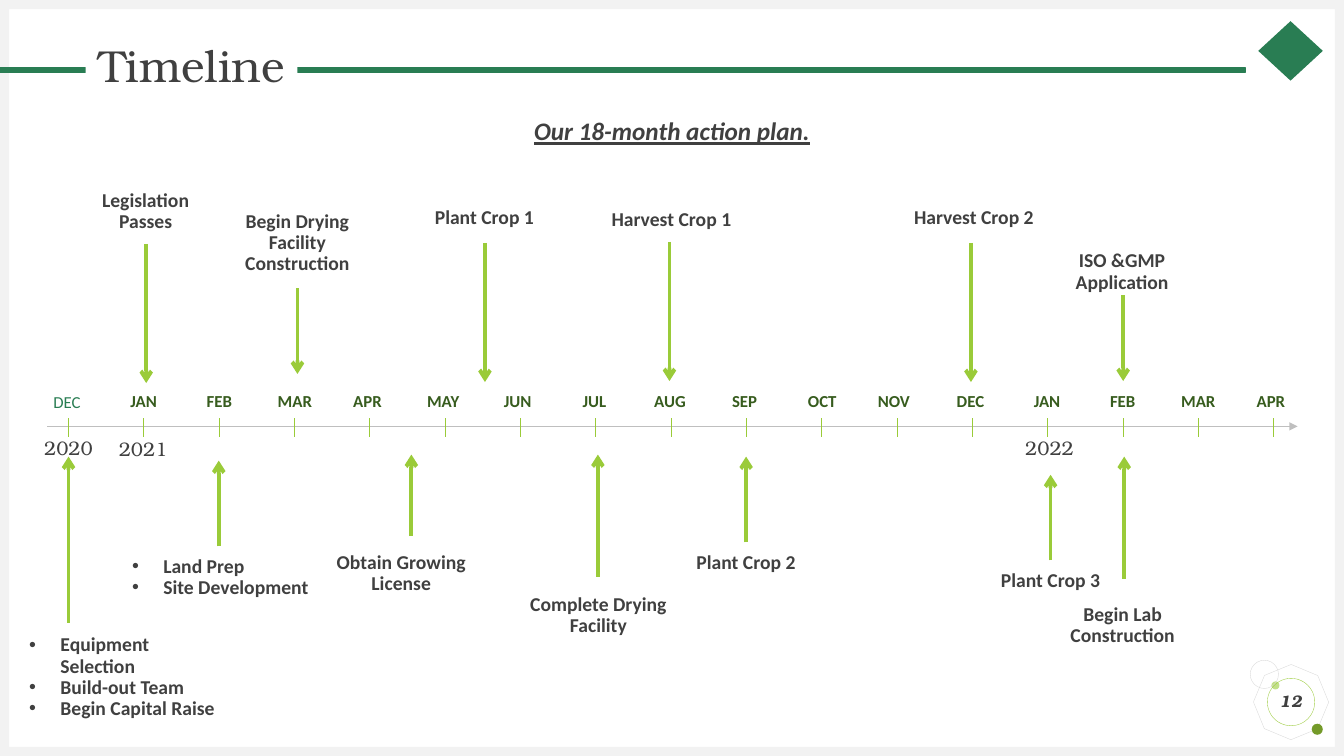
from lxml import etree
from pptx import Presentation
from pptx.dml.color import RGBColor
from pptx.enum.shapes import MSO_CONNECTOR as Link, MSO_SHAPE as Kind
from pptx.enum.text import MSO_ANCHOR as Anchor, PP_ALIGN as Align
from pptx.oxml.ns import qn
from pptx.util import Inches, Pt

SANS, SERIF = "Calibri", "TeX Gyre Bonum"
WHITE = RGBColor(0xFF, 0xFF, 0xFF)
FRAME = RGBColor(0xF2, 0xF2, 0xF2)
PALE = RGBColor(0xD9, 0xD9, 0xD9)
AXIS = RGBColor(0xBF, 0xBF, 0xBF)
DARK = RGBColor(0x40, 0x40, 0x40)
GREEN = RGBColor(0x29, 0x7D, 0x53)
MOSS = RGBColor(0x37, 0x5C, 0x1E)
LIME = RGBColor(0x9A, 0xCB, 0x39)
LIGHT = RGBColor(0xC2, 0xE0, 0x88)
OLIVE = RGBColor(0x74, 0x9A, 0x29)

WIDTH, HEIGHT, EDGE = 13.33, 7.5, 0.09
TICK_X, TICK_GAP = 0.68, 0.747

# Month and left edge of its label
MONTHS = [
    ("DEC", 0.46), ("JAN", 1.22), ("FEB", 1.97), ("MAR", 2.72), ("APR", 3.44),
    ("MAY", 4.19), ("JUN", 4.93), ("JUL", 5.69), ("AUG", 6.44), ("SEP", 7.18),
    ("OCT", 7.95), ("NOV", 8.66), ("DEC", 9.42), ("JAN", 10.18),
    ("FEB", 10.93), ("MAR", 11.68), ("APR", 12.4),
]
YEARS = [("2020", 0.38, 4.35), ("2021", 1.12, 4.36), ("2022", 10.11, 4.35)]

# Label lines, label box, then arrow x, start y and end y
EVENTS = [
    (["Legislation Passes"], (0.83, 1.85, 1.23, 0.44), (1.45, 2.42, 3.8)),
    (["Begin Drying Facility Construction"], (2.2, 2.06, 1.5, 0.37), (2.95, 2.86, 3.71)),
    (["Plant Crop 1"], (4.11, 2.02, 1.39, 0.4), (4.81, 2.41, 3.79)),
    (["Harvest Crop 1"], (5.91, 2.04, 1.5, 0.37), (6.64, 2.4, 3.78)),
    (["Harvest Crop 2"], (8.91, 2.02, 1.5, 0.37), (9.63, 2.41, 3.79)),
    (["ISO &GMP Application"], (10.38, 2.45, 1.5, 0.37), (11.14, 2.93, 3.78)),
    (["Equipment Selection", "Build-out Team", "Begin Capital Raise"],
     (0.29, 6.26, 1.96, 1.06), (0.68, 6.18, 4.53)),
    (["Land Prep", "Site Development"], (1.31, 5.48, 1.96, 0.61), (2.17, 5.42, 4.57)),
    (["Obtain Growing License"], (3.23, 5.44, 1.5, 0.44), (4.08, 5.32, 4.51)),
    (["Complete Drying Facility"], (5.24, 5.86, 1.39, 0.4), (5.93, 5.72, 4.51)),
    (["Plant Crop 2"], (6.42, 5.44, 1.96, 0.61), (7.4, 5.38, 4.53)),
    (["Plant Crop 3"], (9.44, 5.62, 1.96, 0.61), (10.42, 5.56, 4.71)),
    (["Begin Lab Construction"], (10.48, 5.96, 1.31, 0.61), (11.15, 5.74, 4.53)),
]


def add_shape(slide, kind, box, fill=None, line=None, width=0.25):
    shape = slide.shapes.add_shape(kind, *map(Inches, box))
    shape.shadow.inherit = False
    if fill is None:
        shape.fill.background()
    else:
        shape.fill.solid()
        shape.fill.fore_color.rgb = fill
    if line is None:
        shape.line.fill.background()
    else:
        shape.line.color.rgb = line
        shape.line.width = Pt(width)
    return shape


def add_line(slide, start, end, color, width, head=None):
    """Draw a straight line, with an arrowhead of type head at its end."""
    line = slide.shapes.add_connector(Link.STRAIGHT, *map(Inches, start + end))
    line.line.color.rgb = color
    line.line.width = Pt(width)
    if head:
        etree.SubElement(line.line._get_or_add_ln(), qn("a:tailEnd"), type=head)
    etree.SubElement(line._element.spPr, qn("a:effectLst"))


def add_bullet(para):
    props = para._p.get_or_add_pPr()
    props.set("marL", str(Inches(0.31)))
    props.set("indent", str(-Inches(0.31)))
    etree.SubElement(props, qn("a:buFont"), typeface="Arial")
    etree.SubElement(props, qn("a:buChar"), char="•")


def set_text(shape, lines, size, face=SANS, color=DARK, bold=False,
             italic=False, under=False, anchor=Anchor.TOP, top=0):
    """Fill a shape with text; several lines become a bulleted list."""
    frame = shape.text_frame
    frame.word_wrap = True
    frame.vertical_anchor = anchor
    frame.margin_left = frame.margin_right = frame.margin_bottom = 0
    frame.margin_top = Inches(top)
    frame.text = "\n".join(lines)
    for para in frame.paragraphs:
        para.line_spacing = 0.9
        if len(lines) > 1:
            para.alignment = Align.LEFT
            add_bullet(para)
        else:
            para.alignment = Align.CENTER
        for run in para.runs:
            font = run.font
            font.name, font.size = face, Pt(size)
            font.bold, font.italic, font.underline = bold, italic, under
            font.color.rgb = color


def add_text(slide, box, lines, size, **style):
    set_text(slide.shapes.add_textbox(*map(Inches, box)), lines, size, **style)


def add_frame(slide):
    for box in [(0, HEIGHT - EDGE, WIDTH, EDGE), (0, 0, WIDTH, EDGE),
                (0, 0, EDGE, HEIGHT), (WIDTH - EDGE, 0, EDGE, HEIGHT)]:
        add_shape(slide, Kind.RECTANGLE, box, FRAME)


def add_header(slide):
    add_shape(slide, Kind.DIAMOND, (12.48, 0.21, 0.64, 0.59), GREEN)
    for left, width in [(0, 0.85), (2.95, 9.4)]:
        add_shape(slide, Kind.RECTANGLE, (left, 0.67, width, 0.05), GREEN, GREEN, 1)
    title = add_shape(slide, Kind.RECTANGLE, (0.85, 0.4, 2.1, 0.55), WHITE)
    set_text(title, ["Timeline"], 32, face=SERIF, anchor=Anchor.MIDDLE)
    add_text(slide, (0, 1.18, WIDTH, 0.4), ["Our 18-month action plan."], 18,
             bold=True, italic=True, under=True)


def add_badge(slide):
    """Add the page number with its rings and dots."""
    ring = add_shape(slide, Kind.OCTAGON, (12.46, 6.62, 0.69, 0.69), line=PALE)
    ring.rotation = 22.7
    add_shape(slide, Kind.OVAL, (12.61, 6.76, 0.08, 0.08), LIGHT)
    add_shape(slide, Kind.OVAL, (13.01, 7.18, 0.11, 0.11), OLIVE)
    add_shape(slide, Kind.OVAL, (12.4, 6.55, 0.28, 0.28), line=PALE)
    page = add_shape(slide, Kind.OVAL, (12.57, 6.73, 0.47, 0.47), line=LIME)
    set_text(page, ["12"], 12, face=SERIF, bold=True, italic=True,
             anchor=Anchor.MIDDLE)


def add_axis(slide):
    add_line(slide, (0.47, 4.23), (12.87, 4.23), AXIS, 0.5, "triangle")
    for i, (month, left) in enumerate(MONTHS):
        x = TICK_X + i * TICK_GAP
        add_line(slide, (x, 4.15), (x, 4.34), LIME, 0.5 if i < 12 else 0.25)
        first = i == 0
        add_text(slide, (left, 3.91 if first else 3.9, 0.41, 0.22), [month], 12,
                 color=GREEN if first else MOSS, bold=not first)
    for year, left, top in YEARS:
        add_text(slide, (left, top, 0.6, 0.22), [year], 14, face=SERIF,
                 anchor=Anchor.MIDDLE)


def add_event(slide, lines, box, arrow):
    x, start, end = arrow
    add_line(slide, (x, start), (x, end), LIME, 2.75, "arrow")
    add_text(slide, box, lines, 14, bold=True, top=0.04)


def main():
    deck = Presentation()
    deck.slide_width, deck.slide_height = Inches(WIDTH), Inches(HEIGHT)
    slide = deck.slides.add_slide(deck.slide_layouts[6])
    add_frame(slide)
    add_header(slide)
    add_badge(slide)
    add_axis(slide)
    for event in EVENTS:
        add_event(slide, *event)
    deck.save("out.pptx")


if __name__ == "__main__":
    main()
